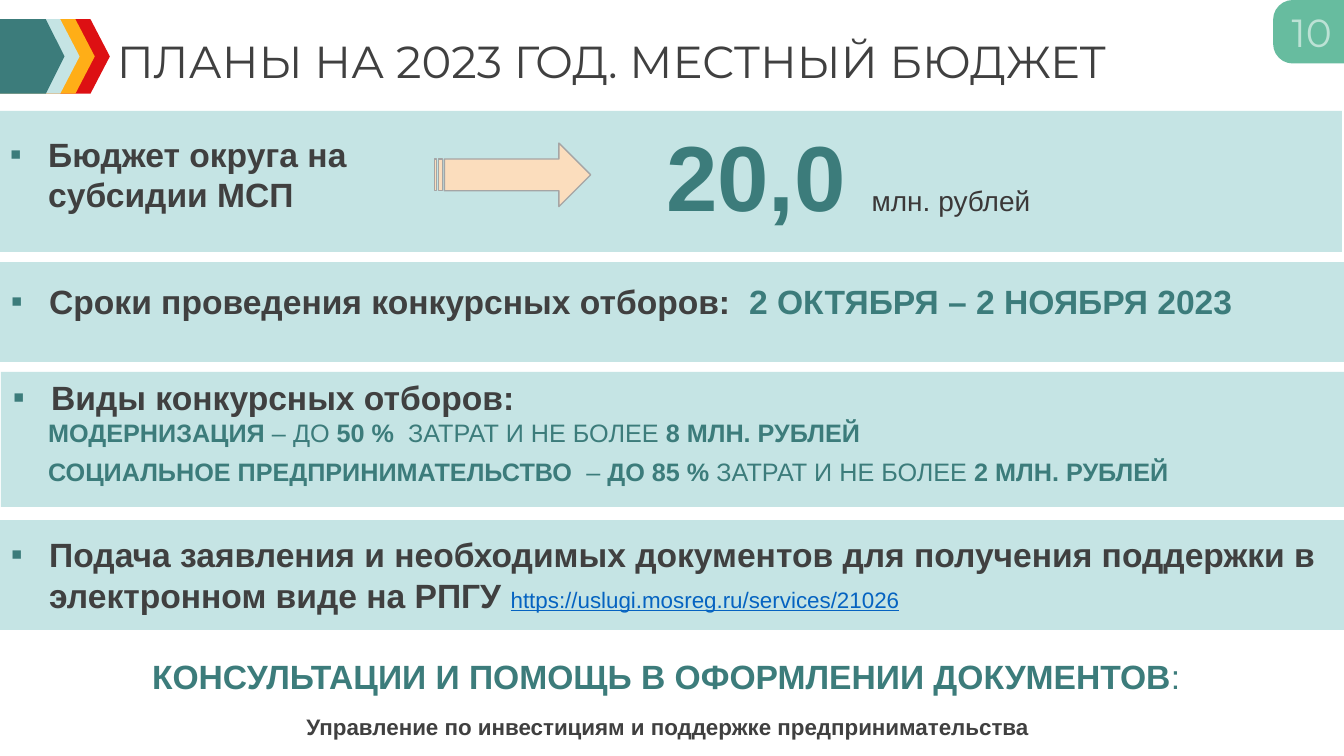
from dataclasses import dataclass, field

import pptx
import pptx.dml.color
import pptx.enum.shapes
import pptx.enum.text
import pptx.oxml
import pptx.util

Pt = pptx.util.Pt
MSO = pptx.enum.shapes.MSO_SHAPE
ANCHOR = pptx.enum.text.MSO_ANCHOR
ALIGN = pptx.enum.text.PP_ALIGN
FIT = pptx.enum.text.MSO_AUTO_SIZE

# Slide grid: 80 columns by 45 rows
WIDTH, HEIGHT = pptx.util.Inches(13.33), pptx.util.Inches(7.5)
COL, ROW = WIDTH / 80, HEIGHT / 45

COLORS = {
    "teal": "3C7C7B", "mint": "C5E4E4", "amber": "FFAE17", "red": "DD1013",
    "green": "67BC9F", "pale": "BCE2D5", "peach": "FBDDBD", "gray": "A5A5A5",
    "dark": "404040", "ink": "3B3838", "link": "0563C1",
}


@dataclass
class Run:
    text: str
    size: int = 24
    color: str = "dark"
    bold: bool = True
    underline: bool = False
    font: str = "Arial"


@dataclass
class Para:
    runs: list[Run]
    bullet: bool = False
    indent: float = 0
    before: int = 0
    after: int = 0
    align: ALIGN = ALIGN.LEFT


@dataclass
class Box:
    col: float
    row: float
    cols: float
    rows: float

    def place(self) -> tuple[int, int, int, int]:
        return (round(self.col * COL), round(self.row * ROW),
                round(self.cols * COL), round(self.rows * ROW))


@dataclass
class Shape:
    kind: MSO
    box: Box
    fill: str
    adj: list[float] = field(default_factory=list)
    line: str = ""


@dataclass
class Text:
    box: Box
    paras: list[Para]


def rgb(name: str) -> pptx.dml.color.RGBColor:
    return pptx.dml.color.RGBColor.from_string(COLORS[name])


def add_bullet(p) -> None:
    """Hang the paragraph from a small teal square."""
    pPr = p._p.get_or_add_pPr()
    pPr.set("marL", str(pptx.util.Inches(0.38)))
    pPr.set("indent", str(-pptx.util.Inches(0.38)))
    ns = 'xmlns:a="http://schemas.openxmlformats.org/drawingml/2006/main"'
    for xml in (f'<a:buClr {ns}><a:srgbClr val="{COLORS["teal"]}"/></a:buClr>',
                f'<a:buFont {ns} typeface="Arial"/>',
                f'<a:buChar {ns} char="▪"/>'):
        pPr.append(pptx.oxml.parse_xml(xml))


def write(tf, paras: list[Para]) -> None:
    for i, para in enumerate(paras):
        p = tf.add_paragraph() if i else tf.paragraphs[0]
        p.alignment = para.align
        p.space_before, p.space_after = Pt(para.before), Pt(para.after)
        if para.indent:
            p._p.get_or_add_pPr().set("marL", str(pptx.util.Inches(para.indent)))
        if para.bullet:
            add_bullet(p)
        for run in para.runs:
            r = p.add_run()
            r.text = run.text
            r.font.name, r.font.size = run.font, Pt(run.size)
            r.font.bold, r.font.underline = run.bold, run.underline
            r.font.color.rgb = rgb(run.color)


def add_shape(slide, shape: Shape):
    sp = slide.shapes.add_shape(shape.kind, *shape.box.place())
    sp.shadow.inherit = False
    sp.fill.solid()
    sp.fill.fore_color.rgb = rgb(shape.fill)
    for i, value in enumerate(shape.adj):
        sp.adjustments[i] = value
    if shape.line:
        sp.line.color.rgb = rgb(shape.line)
        sp.line.width = Pt(1)
    else:
        sp.line.fill.background()
    return sp


def add_text(slide, text: Text) -> None:
    tf = slide.shapes.add_textbox(*text.box.place()).text_frame
    tf.word_wrap = True
    write(tf, text.paras)


def add_title(slide, box: Box, run: Run) -> None:
    sp = slide.shapes.title
    sp.left, sp.top, sp.width, sp.height = box.place()
    tf = sp.text_frame
    tf.auto_size, tf.vertical_anchor = FIT.NONE, ANCHOR.TOP
    write(tf, [Para([run])])


def add_badge(slide, shape: Shape, run: Run) -> None:
    sp = add_shape(slide, shape)
    sp.rotation = 270
    tf = sp.text_frame
    tf.margin_left = tf.margin_right = 0
    tf.vertical_anchor = ANCHOR.MIDDLE
    tf._txBody.bodyPr.set("vert", "vert")
    write(tf, [Para([run], align=ALIGN.CENTER)])


def teal(text: str, bold: bool = True, size: int = 18) -> Run:
    return Run(text, size, "teal", bold)


BANDS = [Box(-0.12, 6.6, 80, 8.4), Box(0, 15.6, 80, 5.94),
         Box(0.06, 22.14, 80, 8.04), Box(0, 30.96, 80, 6.54)]

# Header chevrons, widest at the back
CHEVRONS = [Shape(MSO.PENTAGON, Box(0, 1.14, 6.54 - 0.9 * i, 4.44), color, [adj])
            for i, (color, adj) in enumerate([("red", 0.26), ("amber", 0.26),
                                              ("mint", 0.26), ("teal", 0.29)])]

ARROW = Shape(MSO.STRIPED_RIGHT_ARROW, Box(25.86, 8.52, 9.3, 3.78), "peach", line="gray")
BADGE = Shape(MSO.ROUND_2_SAME_RECTANGLE, Box(76.02, -0.24, 3.78, 4.26), "green", [0.31, 0])

TEXTS = [
    # Budget
    Text(Box(39.06, 6.78, 24.18, 7.26), [
        Para([teal("20,0 ", size=66), Run("млн. рублей", 20, "ink", False)])]),
    Text(Box(0, 7.68, 27.12, 5.46), [
        Para([Run("Бюджет округа на субсидии МСП")], bullet=True)]),
    # Dates
    Text(Box(0.06, 16.44, 79.56, 3), [
        Para([Run("Сроки проведения конкурсных отборов:  "),
              teal("2 ОКТЯБРЯ – 2 НОЯБРЯ 2023", size=24)], bullet=True)]),
    # Kinds of selection
    Text(Box(0.18, 22.14, 79.14, 7.14), [
        Para([Run("Виды конкурсных отборов:")], bullet=True),
        Para([teal("МОДЕРНИЗАЦИЯ"), teal(" – ДО ", False), teal("50 %"),
              teal("  ЗАТРАТ И НЕ БОЛЕЕ ", False), teal("8 МЛН. РУБЛЕЙ")], indent=0.35),
        Para([teal("СОЦИАЛЬНОЕ ПРЕДПРИНИМАТЕЛЬСТВО  "), teal("– ", False),
              teal("ДО 85 % "), teal("ЗАТРАТ И НЕ БОЛЕЕ ", False),
              teal("2 МЛН. РУБЛЕЙ")], indent=0.35, before=6)]),
    # Application
    Text(Box(0.06, 31.5, 79.5, 5.46), [
        Para([Run("Подача заявления и необходимых документов для получения "
                  "поддержки в электронном виде на РПГУ "),
              Run("https://uslugi.mosreg.ru/services/21026", 16, "link", False, True)],
             bullet=True)]),
    # Contacts
    Text(Box(0, 38.76, 79.86, 5.64), [
        Para([teal("КОНСУЛЬТАЦИИ И ПОМОЩЬ В ОФОРМЛЕНИИ ДОКУМЕНТОВ", size=24),
              teal(": ", False, 24)], before=6, after=6, align=ALIGN.CENTER),
        Para([Run("Управление по инвестициям и поддержке предпринимательства ", 16)],
             before=6, after=6, align=ALIGN.CENTER)]),
]


def main() -> None:
    prs = pptx.Presentation()
    prs.slide_width, prs.slide_height = WIDTH, HEIGHT
    slide = prs.slides.add_slide(prs.slide_layouts[5])
    add_title(slide, Box(6.36, 1.68, 73.08, 3.84),
              Run("ПЛАНЫ НА 2023 ГОД. МЕСТНЫЙ БЮДЖЕТ", 32, bold=False, font="Montserrat"))
    for band in BANDS:
        add_shape(slide, Shape(MSO.RECTANGLE, band, "mint"))
    for shape in [*CHEVRONS, ARROW]:
        add_shape(slide, shape)
    add_badge(slide, BADGE, Run("10", 28, "pale", False, font="Montserrat"))
    for text in TEXTS:
        add_text(slide, text)
    prs.save("out.pptx")


if __name__ == "__main__":
    main()
